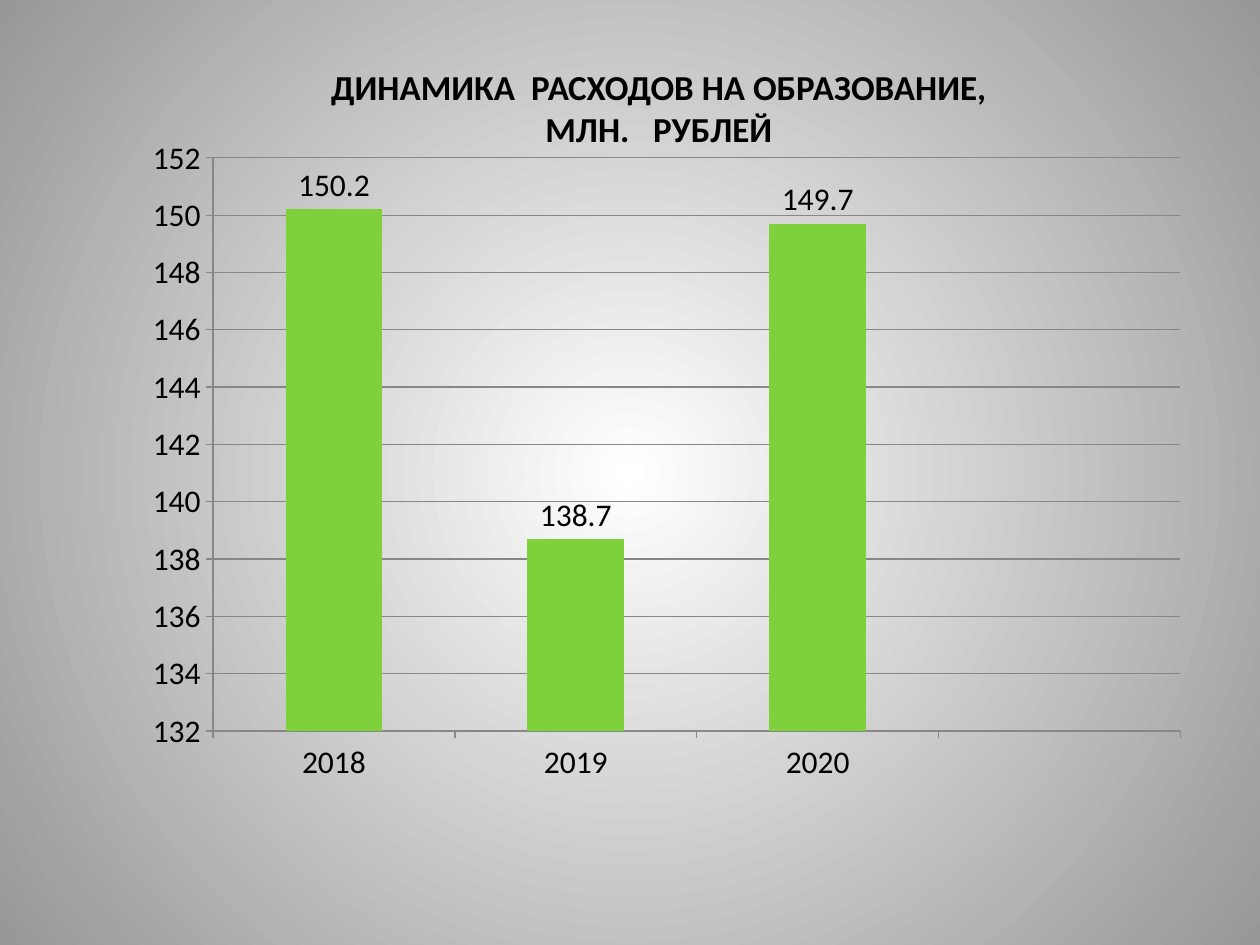
import pptx
import pptx.chart.data
import pptx.dml.color
import pptx.enum.chart
import pptx.enum.text
import pptx.oxml
import pptx.oxml.ns
import pptx.util
from pptx.util import Inches

COLORS = {
    "text": "000000",
    "bar": "7FD13B",
    "grid": "878787",
    "center": "FFFFFF",
    "edge": "979797",
}
FONT = "Calibri"


class SlideBuilder:
    def __init__(self, page):
        self.page = page

    def color(self, name):
        return pptx.dml.color.RGBColor.from_string(COLORS[name])

    def style_font(self, font, size, bold=False):
        font.name = FONT
        font.size = pptx.util.Pt(size)
        font.bold = bold
        font.color.rgb = self.color("text")

    def style_line(self, line):
        line.color.rgb = self.color("grid")
        line.width = pptx.util.Pt(0.75)

    def radial_background(self, center, edge):
        fill = self.page.background.fill
        fill.gradient()
        for stop, name in zip(fill.gradient_stops, (center, edge)):
            stop.color.rgb = self.color(name)
        gradient = self.page.element.xpath(".//p:bgPr/a:gradFill")[0]
        circle = pptx.oxml.parse_xml(
            f'<a:path {pptx.oxml.ns.nsdecls("a")} path="circle">'
            '<a:fillToRect l="50000" t="50000" r="50000" b="50000"/></a:path>'
        )
        gradient.replace(gradient.find(pptx.oxml.ns.qn("a:lin")), circle)

    def title(self, lines, left, top, width, height):
        box = self.page.shapes.add_textbox(
            Inches(left), Inches(top), Inches(width), Inches(height)
        )
        frame = box.text_frame
        frame.word_wrap = True
        frame.auto_size = pptx.enum.text.MSO_AUTO_SIZE.SHAPE_TO_FIT_TEXT
        frame.text = "\n".join(lines)
        for para in frame.paragraphs:
            para.alignment = pptx.enum.text.PP_ALIGN.CENTER
            self.style_font(para.font, 20, bold=True)

    def place_plot(self, chart, x, y, w, h):
        spots = "".join(
            f'<c:{tag} val="{value}"/>'
            for tag, value in (
                ("layoutTarget", "inner"), ("xMode", "edge"), ("yMode", "edge"),
                ("x", x), ("y", y), ("w", w), ("h", h),
            )
        )
        layout = pptx.oxml.parse_xml(
            f'<c:layout {pptx.oxml.ns.nsdecls("c")}>'
            f"<c:manualLayout>{spots}</c:manualLayout></c:layout>"
        )
        area = chart.element.xpath(".//c:plotArea")[0]
        for old in area.findall(pptx.oxml.ns.qn("c:layout")):
            area.remove(old)
        area.insert(0, layout)

    def column_chart(self, categories, values, left, top, width, height):
        data = pptx.chart.data.CategoryChartData()
        data.categories = categories
        data.add_series("Series 1", values)
        chart = self.page.shapes.add_chart(
            pptx.enum.chart.XL_CHART_TYPE.COLUMN_CLUSTERED,
            Inches(left), Inches(top), Inches(width), Inches(height), data,
        ).chart
        chart.has_legend = False
        chart.has_title = False
        self.style_font(chart.font, 18)

        plot = chart.plots[0]
        plot.vary_by_categories = False
        plot.gap_width = 150
        plot.has_data_labels = True
        labels = plot.data_labels
        labels.show_value = True
        labels.position = pptx.enum.chart.XL_LABEL_POSITION.OUTSIDE_END
        bars = plot.series[0].format.fill
        bars.solid()
        bars.fore_color.rgb = self.color("bar")

        for axis in (chart.category_axis, chart.value_axis):
            axis.major_tick_mark = pptx.enum.chart.XL_TICK_MARK.OUTSIDE
            axis.minor_tick_mark = pptx.enum.chart.XL_TICK_MARK.NONE
            self.style_line(axis.format.line)
        scale = chart.value_axis
        scale.minimum_scale = 132
        scale.maximum_scale = 152
        scale.major_unit = 2
        scale.has_major_gridlines = True
        self.style_line(scale.major_gridlines.format.line)
        self.place_plot(chart, 0.136, 0.029, 0.855, 0.808)


def main():
    deck = pptx.Presentation()
    deck.slide_width = Inches(10)
    deck.slide_height = Inches(7.5)
    builder = SlideBuilder(deck.slides.add_slide(deck.slide_layouts[6]))
    builder.radial_background("center", "edge")
    builder.column_chart(
        ["2018", "2019", "2020", ""], [150.2, 138.7, 149.7, None],
        0.47, 1.09, 8.98, 5.63,
    )
    builder.title(
        ["ДИНАМИКА  РАСХОДОВ НА ОБРАЗОВАНИЕ,", "МЛН.   РУБЛЕЙ"],
        1.56, 0.47, 7.34, 0.77,
    )
    deck.save("out.pptx")


if __name__ == "__main__":
    main()
